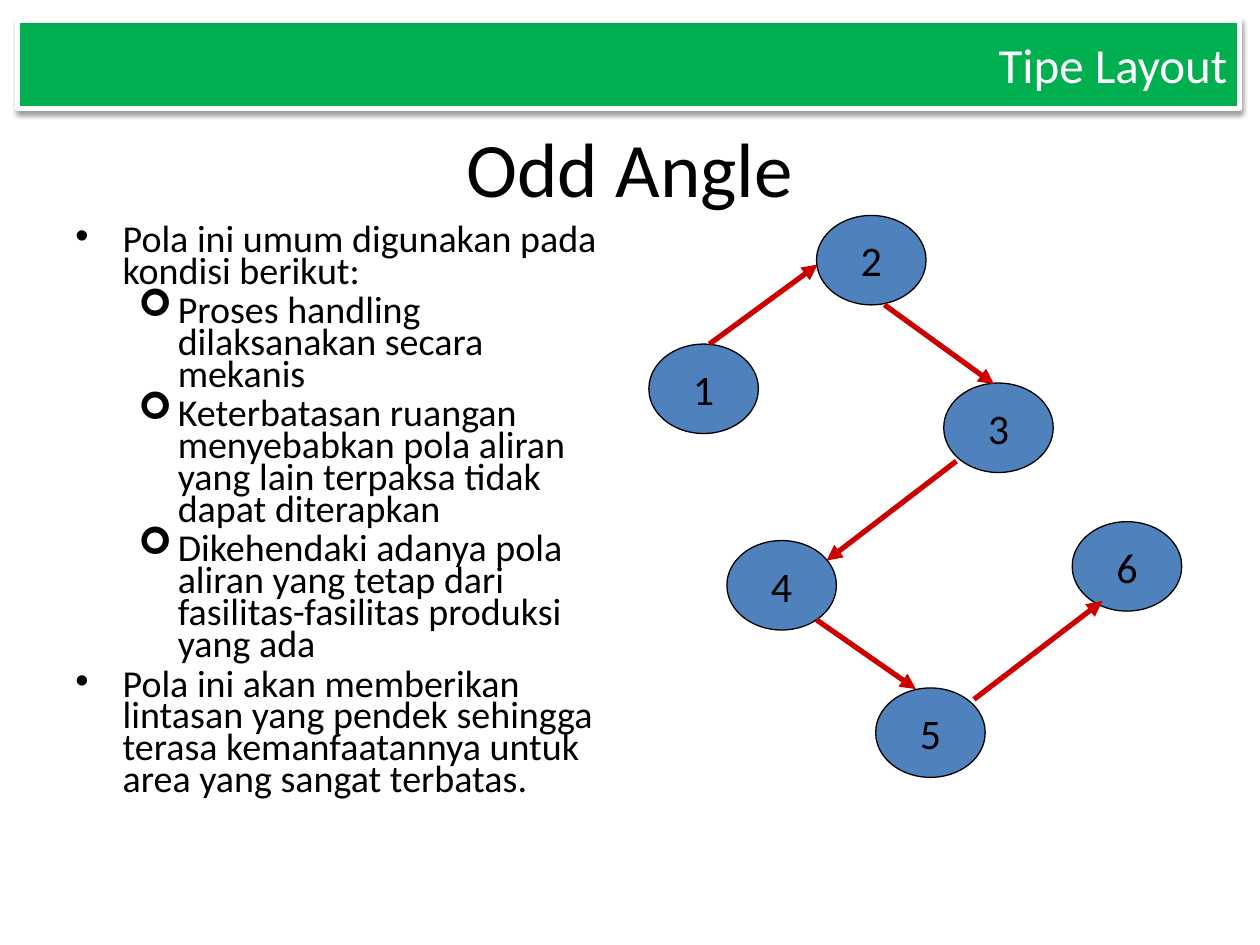
from typing import NamedTuple

from lxml import etree
from pptx import Presentation
from pptx import util as u
from pptx.dml.color import RGBColor
from pptx.enum import shapes, text
from pptx.oxml import ns

Pt = u.Pt
FONT = "Calibri"
BLACK, WHITE, GREEN, BLUE, RED = "000000", "FFFFFF", "00B050", "4F81BD", "CC0000"
NODE_W, NODE_H = 62.6, 51.1
LEFT, CENTER, RIGHT = text.PP_ALIGN.LEFT, text.PP_ALIGN.CENTER, text.PP_ALIGN.RIGHT


class Node(NamedTuple):
    label: str
    x: float
    y: float


class Arrow(NamedTuple):
    x1: float
    y1: float
    x2: float
    y2: float


class Level(NamedTuple):
    bullet: str
    bullet_font: str
    margin: float
    hanging: float


class Item(NamedTuple):
    level: int
    words: str


NODES = [
    Node("1", 370.8, 196.6),
    Node("2", 466.6, 123.1),
    Node("3", 539.3, 218.9),
    Node("4", 415.4, 308.9),
    Node("5", 500.4, 393.1),
    Node("6", 612.7, 298.1),
]
ARROWS = [
    Arrow(405.4, 196.6, 467.3, 151.2),
    Arrow(505.4, 174.2, 568.1, 219.6),
    Arrow(546.5, 263.5, 472.3, 320.4),
    Arrow(466.6, 354.2, 523.4, 393.8),
    Arrow(556.6, 399.6, 630, 343.4),
]
LEVELS = [Level("•", "Arial", 27, 27), Level("➢", "Wingdings", 58.5, 22.5)]
ITEMS = [
    Item(0, "Pola ini umum digunakan pada kondisi berikut:"),
    Item(1, "Proses handling dilaksanakan secara mekanis"),
    Item(1, "Keterbatasan ruangan menyebabkan pola aliran yang lain "
            "terpaksa tidak dapat diterapkan"),
    Item(1, "Dikehendaki adanya pola aliran yang tetap dari "
            "fasilitas-fasilitas produksi yang ada"),
    Item(0, "Pola ini akan memberikan lintasan yang pendek sehingga terasa "
            "kemanfaatannya untuk area yang sangat terbatas."),
]


def rgb(value: str) -> RGBColor:
    return RGBColor.from_string(value)


def add_xml(parent, tag: str, **attrs):
    """Append a DrawingML child element and return it."""
    return etree.SubElement(parent, ns.qn(tag), {k: str(v) for k, v in attrs.items()})


def write(p, words: str, *, size: float, color: str = BLACK, align=LEFT) -> None:
    p.alignment = align
    r = p.add_run()
    r.text = words
    r.font.name, r.font.size = FONT, Pt(size)
    r.font.color.rgb = rgb(color)


def add_box(slide, x: float, y: float, w: float, h: float, anchor):
    tf = slide.shapes.add_textbox(Pt(x), Pt(y), Pt(w), Pt(h)).text_frame
    tf.word_wrap = True
    tf.vertical_anchor = anchor
    return tf


def add_filled(slide, kind, x: float, y: float, w: float, h: float, *,
               fill: str, line: str, width: float):
    s = slide.shapes.add_shape(kind, Pt(x), Pt(y), Pt(w), Pt(h))
    s.shadow.inherit = False
    s.fill.solid()
    s.fill.fore_color.rgb = rgb(fill)
    s.line.color.rgb = rgb(line)
    s.line.width = Pt(width)
    s.text_frame.vertical_anchor = text.MSO_ANCHOR.MIDDLE
    return s


def add_header(slide, words: str) -> None:
    s = add_filled(slide, shapes.MSO_SHAPE.RECTANGLE, 10.1, 11.5, 698.4, 50.4,
                   fill=GREEN, line=WHITE, width=3)
    effects = s._element.spPr.find(ns.qn("a:effectLst"))
    shadow = add_xml(effects, "a:outerShdw", blurRad=Pt(3.1), dist=Pt(1.6),
                     dir=90 * 60000, rotWithShape=0)
    add_xml(add_xml(shadow, "a:srgbClr", val=BLACK), "a:alpha", val=38000)
    write(s.text_frame.paragraphs[0], words, size=28, color=WHITE, align=RIGHT)


def add_bullets(slide, items: list[Item]) -> None:
    tf = add_box(slide, 36, 126, 318.2, 356.4, text.MSO_ANCHOR.TOP)
    for i, item in enumerate(items):
        p = tf.add_paragraph() if i else tf.paragraphs[0]
        level = LEVELS[item.level]
        write(p, item.words, size=21.7)
        p.level = item.level
        p.line_spacing = 0.7
        p.space_before = Pt(4.3)
        pPr = p._p.get_or_add_pPr()
        pPr.set("marL", str(Pt(level.margin)))
        pPr.set("indent", str(-Pt(level.hanging)))
        add_xml(pPr, "a:buFont", typeface=level.bullet_font)
        add_xml(pPr, "a:buChar", char=level.bullet)


def add_node(slide, node: Node) -> None:
    s = add_filled(slide, shapes.MSO_SHAPE.OVAL, node.x, node.y, NODE_W, NODE_H,
                   fill=BLUE, line=BLACK, width=0.75)
    s.text_frame.word_wrap = False
    write(s.text_frame.paragraphs[0], node.label, size=24, align=CENTER)


def add_arrow(slide, arrow: Arrow) -> None:
    s = slide.shapes.add_connector(shapes.MSO_CONNECTOR.STRAIGHT, *map(Pt, arrow))
    s.line.color.rgb = rgb(RED)
    s.line.width = Pt(3)
    add_xml(s.line._get_or_add_ln(), "a:tailEnd", type="triangle")
    add_xml(s._element.spPr, "a:effectLst")


def main() -> None:
    prs = Presentation()
    prs.slide_width, prs.slide_height = Pt(720), Pt(540)
    slide = prs.slides.add_slide(prs.slide_layouts[6])

    title = add_box(slide, 36, 50.4, 648, 90, text.MSO_ANCHOR.MIDDLE)
    write(title.paragraphs[0], "Odd Angle", size=44, align=CENTER)
    add_bullets(slide, ITEMS)
    for node in NODES:
        add_node(slide, node)
    for arrow in ARROWS:
        add_arrow(slide, arrow)
    add_header(slide, "Tipe Layout")

    prs.save("out.pptx")


if __name__ == "__main__":
    main()
